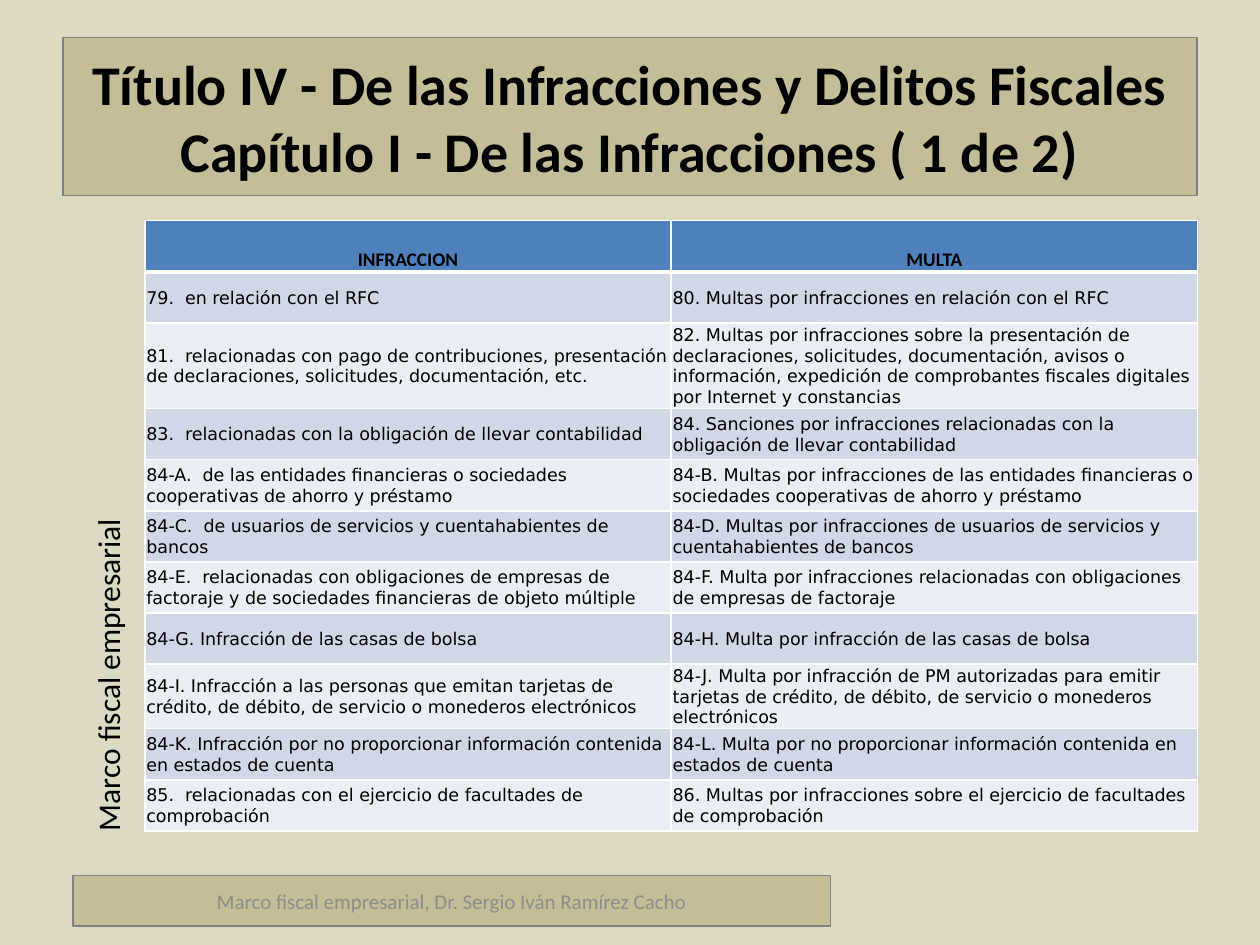
from lxml import etree
from pptx import Presentation
from pptx.dml.color import RGBColor
from pptx.enum.shapes import MSO_SHAPE
from pptx.enum.text import MSO_ANCHOR, MSO_AUTO_SIZE, PP_ALIGN
from pptx.oxml.ns import qn
from pptx.util import Cm, Pt

RECT = MSO_SHAPE.RECTANGLE
MID, LOW = MSO_ANCHOR.MIDDLE, MSO_ANCHOR.BOTTOM
LEFT, CENTER = PP_ALIGN.LEFT, PP_ALIGN.CENTER
FIXED = MSO_AUTO_SIZE.NONE

TITLE = ("Título IV - De las Infracciones y Delitos Fiscales\v"
         "Capítulo I - De las Infracciones ( 1 de 2)")
SIDE = "Marco fiscal empresarial"
FOOT = "Marco fiscal empresarial, Dr. Sergio Iván Ramírez Cacho"
ROWS = [
    ("INFRACCION", "MULTA"),
    ("79.  en relación con el RFC",
     "80. Multas por infracciones en relación con el RFC"),
    ("81.  relacionadas con pago de contribuciones, presentación de "
     "declaraciones, solicitudes, documentación, etc.",
     "82. Multas por infracciones sobre la presentación de declaraciones, "
     "solicitudes, documentación, avisos o información, expedición de "
     "comprobantes fiscales digitales por Internet y constancias"),
    ("83.  relacionadas con la obligación de llevar contabilidad",
     "84. Sanciones por infracciones relacionadas con la obligación de "
     "llevar contabilidad"),
    ("84-A.  de las entidades financieras o sociedades cooperativas de "
     "ahorro y préstamo",
     "84-B. Multas por infracciones de las entidades financieras o "
     "sociedades cooperativas de ahorro y préstamo"),
    ("84-C.  de usuarios de servicios y cuentahabientes de bancos",
     "84-D. Multas por infracciones de usuarios de servicios y "
     "cuentahabientes de bancos"),
    ("84-E.  relacionadas con obligaciones de empresas de factoraje y de "
     "sociedades financieras de objeto múltiple",
     "84-F. Multa por infracciones relacionadas con obligaciones de "
     "empresas de factoraje"),
    ("84-G. Infracción de las casas de bolsa",
     "84-H. Multa por infracción de las casas de bolsa"),
    ("84-I. Infracción a las personas que emitan tarjetas de crédito, de "
     "débito, de servicio o monederos electrónicos",
     "84-J. Multa por infracción de PM autorizadas para emitir tarjetas de "
     "crédito, de débito, de servicio o monederos electrónicos"),
    ("84-K. Infracción por no proporcionar información contenida en "
     "estados de cuenta",
     "84-L. Multa por no proporcionar información contenida en estados de "
     "cuenta"),
    ("85.  relacionadas con el ejercicio de facultades de comprobación",
     "86. Multas por infracciones sobre el ejercicio de facultades de "
     "comprobación"),
]
COL, ROW = 10.61, 1.03
BANDS = ["E9EDF4", "D0D8E8"]
HEAD = dict(name="Calibri", size=Pt(11), bold=True)
BODY = dict(name="DejaVu Sans", size=Pt(10), bold=False)
INSET = dict(margin_left=Cm(0.03), margin_right=Cm(0.03),
             margin_top=Cm(0.03), margin_bottom=0)


def put(obj, **vals):
    """Set each named value on an object."""
    for key, val in vals.items():
        setattr(obj, key, val)


def paint(fill, color):
    """Fill with one solid hex colour."""
    fill.solid()
    fill.fore_color.rgb = RGBColor.from_string(color)


def write(frame, text, color="000000", align=CENTER, **font):
    """Write one formatted paragraph into a text frame."""
    frame.text = text
    para = frame.paragraphs[0]
    para.alignment = align
    for run in para.runs:
        put(run.font, **font)
        paint(run.font.fill, color)


def place(shape, left, top, width, height):
    """Place a shape, in centimetres."""
    put(shape, left=Cm(left), top=Cm(top), width=Cm(width), height=Cm(height))


def panel(shape):
    """Give a shape the tan panel look."""
    paint(shape.fill, "C4BD97")
    paint(shape.line.fill, "808080")
    shape.line.width = Pt(0.75)
    put(shape.text_frame, word_wrap=True, vertical_anchor=MID, auto_size=FIXED)


def border(cell, row):
    """Draw white cell borders, thick below the header."""
    thick = {0: "lnB", 1: "lnT"}.get(row)
    props = cell._tc.get_or_add_tcPr()
    for side in ("lnL", "lnR", "lnT", "lnB"):
        width = Pt(3 if side == thick else 1)
        line = etree.SubElement(props, qn("a:" + side), w=str(width))
        solid = etree.SubElement(line, qn("a:solidFill"))
        etree.SubElement(solid, qn("a:srgbClr"), val="FFFFFF")


def grid(slide):
    """Add the table of offences and fines."""
    table = slide.shapes.add_table(
        len(ROWS), 2, Cm(2.92), Cm(4.45), Cm(2 * COL),
        Cm(len(ROWS) * ROW)).table
    for col in table.columns:
        col.width = Cm(COL)
    for i, row in enumerate(ROWS):
        table.rows[i].height = Cm(ROW)
        look = HEAD if i == 0 else BODY
        for j, text in enumerate(row):
            cell = table.cell(i, j)
            put(cell, vertical_anchor=MID if i else LOW, **INSET)
            border(cell, i)
            paint(cell.fill, BANDS[i % 2] if i else "4F81BD")
            write(cell.text_frame, text, align=LEFT if i else CENTER, **look)


def main():
    """Build and save the slide."""
    deck = Presentation()
    put(deck, slide_width=Cm(25.4), slide_height=Cm(19.05))
    slide = deck.slides.add_slide(deck.slide_layouts[5])
    paint(slide.background.fill, "DDD9C3")

    side = slide.shapes.add_textbox(0, 0, 0, 0)
    place(side, -4.11, 10.21, 12.57, 1.02)
    side.rotation = 270
    side.text_frame.word_wrap = True
    write(side.text_frame, SIDE, align=LEFT, name="Calibri", size=Pt(18))

    title = slide.shapes.title
    place(title, 1.27, 0.76, 22.86, 3.18)
    panel(title)
    write(title.text_frame, TITLE, name="Calibri", size=Pt(32), bold=True)

    foot = slide.shapes.add_shape(RECT, 0, 0, 0, 0)
    place(foot, 1.47, 17.65, 15.27, 1.02)
    foot.shadow.inherit = False
    panel(foot)
    write(foot.text_frame, FOOT, "8C8C8C", name="Calibri", size=Pt(12))

    grid(slide)
    deck.save("out.pptx")


if __name__ == "__main__":
    main()
